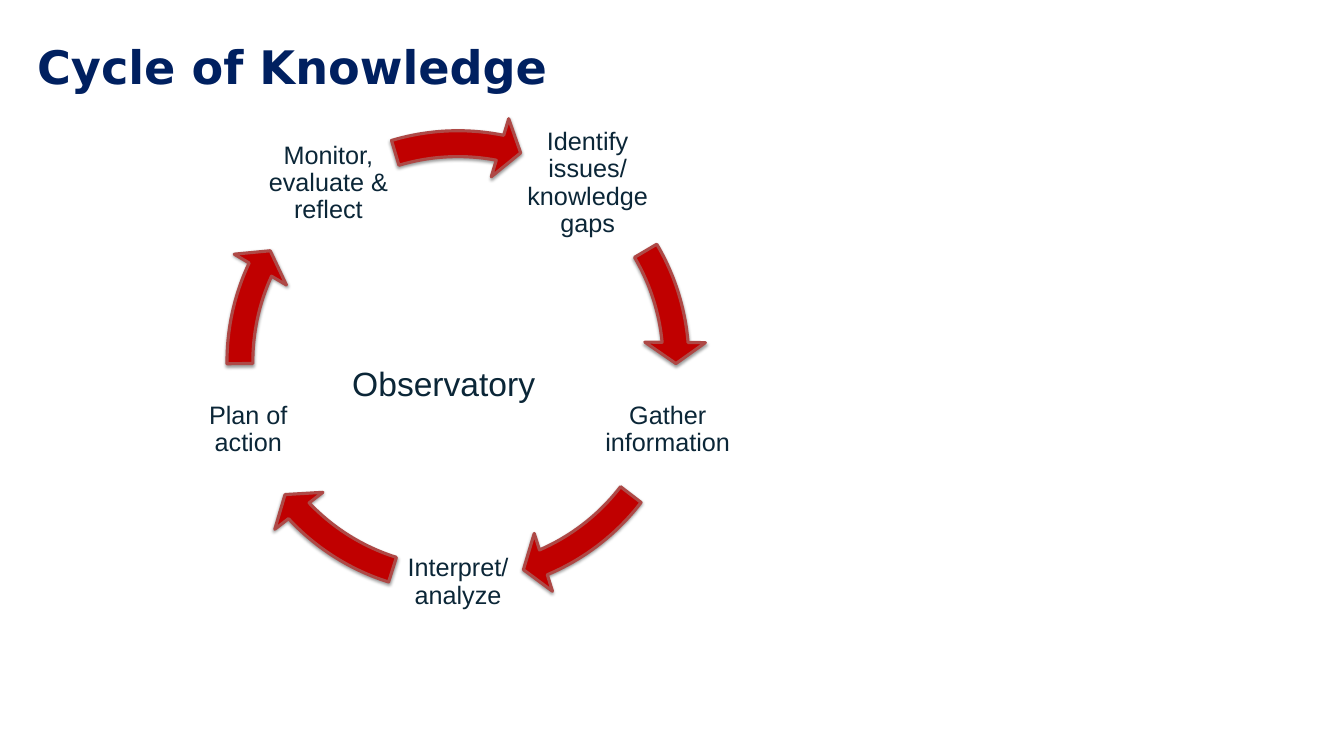
from math import cos, radians, sin

from lxml import etree
from pptx import Presentation
from pptx.dml.color import RGBColor
from pptx.enum.shapes import MSO_SHAPE
from pptx.enum.text import MSO_ANCHOR, MSO_AUTO_SIZE, PP_ALIGN
from pptx.oxml.ns import qn
from pptx.util import Inches, Pt

ARROW = MSO_SHAPE.CIRCULAR_ARROW
LEFT, CENTER = PP_ALIGN.LEFT, PP_ALIGN.CENTER
TOP, MIDDLE = MSO_ANCHOR.TOP, MSO_ANCHOR.MIDDLE
NO_FIT = MSO_AUTO_SIZE.NONE
COLORS = {"title": "002060", "text": "0B2637", "arrow": "C00000",
          "edge": "AE4946", "shadow": "000000"}
WIDTH, HEIGHT = 17.78, 10
TITLE_BOX = (0.022 * WIDTH, 0.042 * HEIGHT, 0.605 * WIDTH, 0.1 * HEIGHT)
RING_BOX = (0.156 * WIDTH, 0.15 * HEIGHT, 0.657 * HEIGHT, 0.657 * HEIGHT)
LABEL_SHARE, RADIUS_SHARE = 0.266, 0.444
FIRST_ANGLE = -54
STAGES = [
    ("Identify issues/ knowledge gaps", 329.42, 354.91),
    ("Gather information", 37.54, 66.93),
    ("Interpret/ analyze", 107.47, 136.87),
    ("Plan of action", 179.5, 204.99),
    ("Monitor, evaluate & reflect", 253.29, 281.12),
]


def color(name):
    """Return the named palette colour."""
    return RGBColor.from_string(COLORS[name])


def inches(box):
    """Convert a box given in inches to slide lengths."""
    return [Inches(length) for length in box]


def write(shape, text, size, font="Arial", ink="text", bold=False, align=LEFT,
          anchor=TOP, spacing=1.0, inset=None):
    """Put one formatted paragraph into a shape."""
    frame = shape.text_frame
    frame.word_wrap = True
    frame.auto_size = NO_FIT
    frame.vertical_anchor = anchor
    if inset is not None:
        frame.margin_left = frame.margin_right = Inches(inset)
        frame.margin_top = frame.margin_bottom = Inches(inset)
    para = frame.paragraphs[0]
    para.alignment = align
    para.line_spacing = spacing
    span = para.add_run()
    span.text = text
    span.font.name = font
    span.font.size = Pt(size)
    span.font.bold = bold
    span.font.color.rgb = color(ink)


def add_shadow(shape):
    """Give a shape a soft shadow straight below it."""
    shape.shadow.inherit = False
    effects = shape._element.spPr.find(qn("a:effectLst"))
    outer = etree.SubElement(effects, qn("a:outerShdw"), blurRad=str(Pt(3.1)),
                             dist=str(Pt(1.6)), dir="5400000", rotWithShape="0")
    tint = etree.SubElement(outer, qn("a:srgbClr"), val=COLORS["shadow"])
    etree.SubElement(tint, qn("a:alpha"), val="38000")


def add_title(page, box, text):
    """Place and format the title placeholder."""
    title = page.shapes.title
    title.left, title.top, title.width, title.height = inches(box)
    write(title, text, 44, font="DejaVu Sans", ink="title", bold=True,
          anchor=MIDDLE, spacing=0.9)


def add_arrow(shapes, box, start, end):
    """Draw one arc arrow of the ring between two angles in degrees."""
    arrow = shapes.add_shape(ARROW, *inches(box))
    degree = 0.6
    settings = (0.052, 5.59 * degree, end * degree, start * degree, 0.061)
    for index, value in enumerate(settings):
        arrow.adjustments[index] = value
    arrow.fill.solid()
    arrow.fill.fore_color.rgb = color("arrow")
    arrow.line.color.rgb = color("edge")
    arrow.line.width = Pt(3)
    add_shadow(arrow)


def add_cycle(page, box, stages):
    """Set the stage labels evenly round a ring of arrows."""
    shapes = page.shapes.add_group_shape().shapes
    left, top, side, _ = box
    label_side = LABEL_SHARE * side
    for index, (text, start, end) in enumerate(stages):
        angle = radians(FIRST_ANGLE + index * 360 / len(stages))
        offset = (side - label_side) / 2
        x = left + offset + RADIUS_SHARE * side * cos(angle)
        y = top + offset + RADIUS_SHARE * side * sin(angle)
        label = shapes.add_textbox(*inches((x, y, label_side, label_side)))
        write(label, text, 24, align=CENTER, anchor=MIDDLE, spacing=0.9, inset=0.03)
        add_arrow(shapes, box, start, end)


def add_hub(page, box, text):
    """Name the centre of the ring."""
    left, top, side, _ = box
    place = (left + 0.272 * side, top + 0.495 * side, 0.406 * side, 0.097 * side)
    write(page.shapes.add_textbox(*inches(place)), text, 32)


def main():
    """Build and save the deck."""
    deck = Presentation()
    deck.slide_width, deck.slide_height = inches((WIDTH, HEIGHT))
    page = deck.slides.add_slide(deck.slide_layouts[5])
    add_title(page, TITLE_BOX, "Cycle of Knowledge")
    add_cycle(page, RING_BOX, STAGES)
    add_hub(page, RING_BOX, "Observatory")
    deck.save("out.pptx")


if __name__ == "__main__":
    main()
